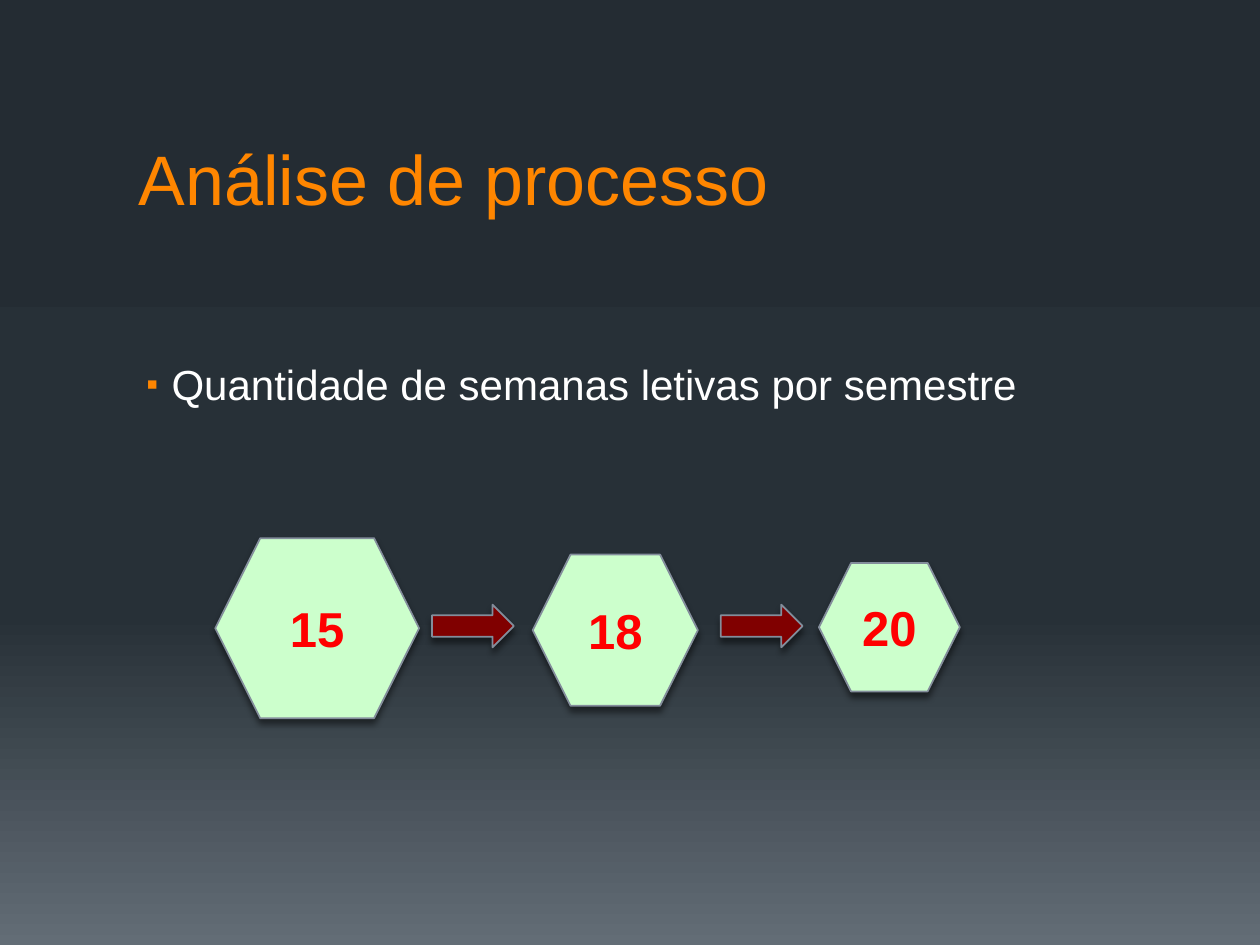
from dataclasses import dataclass

from lxml import etree
from pptx import Presentation
from pptx import util as u
from pptx.dml.color import RGBColor
from pptx.enum import shapes, text
from pptx.oxml.ns import qn


@dataclass(frozen=True)
class Theme:
    font: str = "Arial"
    accent: str = "FF8600"
    body: str = "FFFFFF"
    number: str = "FF0000"
    hexagon: str = "CCFFCC"
    arrow: str = "800000"
    outline: str = "838D9B"
    shadow: str = "000000"
    background: tuple = ((0, "242C33"), (65, "273037"), (100, "636D76"))
    title_size: int = 40
    body_size: int = 24
    number_size: int = 28


def add_element(parent, tag, **attributes):
    element = etree.SubElement(parent, qn(tag))
    for name, value in attributes.items():
        element.set(name, str(value))
    return element


class SlideBuilder:
    def __init__(self, slide, theme):
        self.slide = slide
        self.theme = theme

    def background(self):
        fill = self.slide.background.fill
        fill.gradient()
        fill.gradient_angle = 270
        stops = next(self.slide.element.iter(qn("a:gsLst")))
        for stop in list(stops):
            stops.remove(stop)
        for percent, color in self.theme.background:
            stop = add_element(stops, "a:gs", pos=percent * 1000)
            add_element(stop, "a:srgbClr", val=color)

    def format_text(self, paragraph, size, color, bold=False):
        for run in paragraph.runs:
            run.font.name = self.theme.font
            run.font.size = u.Pt(size)
            run.font.bold = bold
            run.font.color.rgb = RGBColor.from_string(color)

    def title(self, wording, left, top, width, height):
        title = self.slide.shapes.title
        title.left, title.top = u.Cm(left), u.Cm(top)
        title.width, title.height = u.Cm(width), u.Cm(height)
        frame = title.text_frame
        frame.text = wording
        frame.vertical_anchor = text.MSO_ANCHOR.BOTTOM
        paragraph = frame.paragraphs[0]
        paragraph.alignment = text.PP_ALIGN.LEFT
        self.format_text(paragraph, self.theme.title_size, self.theme.accent)

    def bullet(self, wording, left, top, width, height):
        box = self.slide.shapes.add_textbox(
            u.Cm(left), u.Cm(top), u.Cm(width), u.Cm(height))
        frame = box.text_frame
        frame.word_wrap = True
        paragraph = frame.paragraphs[0]
        paragraph.text = wording
        properties = paragraph._p.get_or_add_pPr()
        properties.set("marL", str(u.Cm(0.64)))
        properties.set("indent", str(-u.Cm(0.51)))
        bullet_color = add_element(properties, "a:buClr")
        add_element(bullet_color, "a:srgbClr", val=self.theme.accent)
        add_element(properties, "a:buSzPct", val=80000)
        add_element(properties, "a:buFont", typeface=self.theme.font)
        add_element(properties, "a:buChar", char="▪")
        self.format_text(paragraph, self.theme.body_size, self.theme.body)

    def shape(self, kind, color, left, top, width, height):
        """Add an outlined preset shape with a soft shadow below it."""
        shape = self.slide.shapes.add_shape(
            kind, u.Cm(left), u.Cm(top), u.Cm(width), u.Cm(height))
        shape.fill.solid()
        shape.fill.fore_color.rgb = RGBColor.from_string(color)
        shape.line.color.rgb = RGBColor.from_string(self.theme.outline)
        shape.line.width = u.Pt(1)
        shape.shadow.inherit = False
        effects = shape._element.spPr.find(qn("a:effectLst"))
        shadow = add_element(
            effects, "a:outerShdw", blurRad=u.Pt(3.8), dist=u.Pt(3),
            dir=90 * 60000, algn="ctr", rotWithShape=0)
        shadow_color = add_element(shadow, "a:srgbClr", val=self.theme.shadow)
        add_element(shadow_color, "a:alpha", val=48000)
        return shape

    def hexagon(self, number, *box):
        shape = self.shape(
            shapes.MSO_SHAPE.HEXAGON, self.theme.hexagon, *box)
        frame = shape.text_frame
        frame.text = number
        frame.vertical_anchor = text.MSO_ANCHOR.MIDDLE
        paragraph = frame.paragraphs[0]
        paragraph.alignment = text.PP_ALIGN.CENTER
        self.format_text(
            paragraph, self.theme.number_size, self.theme.number, bold=True)

    def arrow(self, *box):
        self.shape(shapes.MSO_SHAPE.RIGHT_ARROW, self.theme.arrow, *box)


def main():
    presentation = Presentation()
    presentation.slide_width = u.Cm(25.4)
    presentation.slide_height = u.Cm(19.05)
    slide = presentation.slides.add_slide(presentation.slide_layouts[5])
    builder = SlideBuilder(slide, Theme())

    builder.background()
    builder.title("Análise de processo", 2.54, 1.35, 20.32, 3.2)
    builder.bullet(
        "Quantidade de semanas letivas por semestre", 2.57, 7.11, 20.32, 1.22)

    week_counts = (
        ("15", 4.34, 10.85, 4.11, 3.63),
        ("18", 10.74, 11.18, 3.33, 3.05),
        ("20", 16.51, 11.35, 2.84, 2.59),
    )
    for number, *box in week_counts:
        builder.hexagon(number, *box)
    for left in (8.71, 14.53):
        builder.arrow(left, 12.19, 1.65, 0.86)

    presentation.save("out.pptx")


if __name__ == "__main__":
    main()
